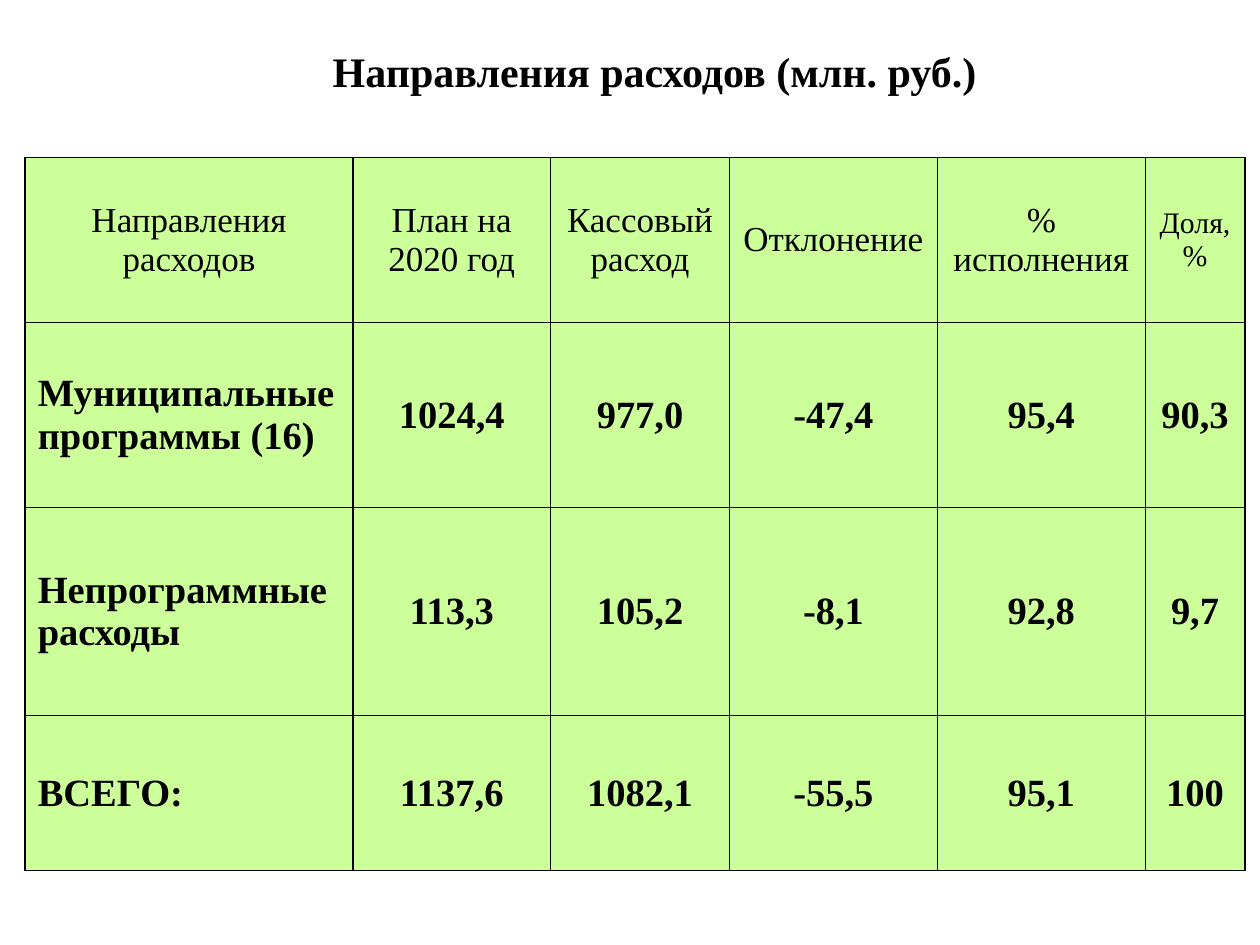
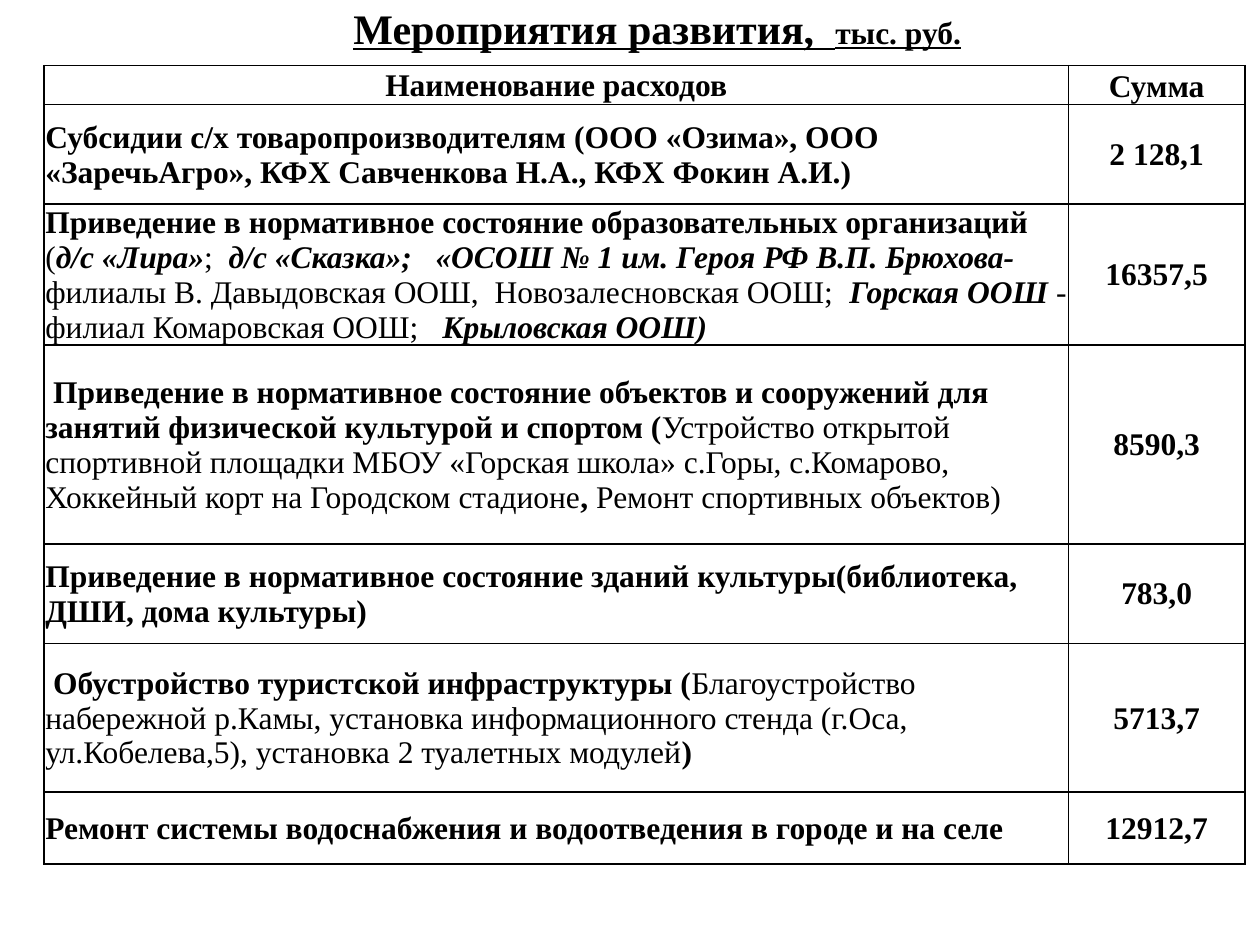
from lxml import etree
from pptx import Presentation
from pptx.dml.color import RGBColor
from pptx.enum.text import MSO_ANCHOR, MSO_AUTO_SIZE, PP_ALIGN
from pptx.oxml.ns import qn
from pptx.util import Inches, Pt

TOP, MIDDLE, BOTTOM = MSO_ANCHOR.TOP, MSO_ANCHOR.MIDDLE, MSO_ANCHOR.BOTTOM
LEFT, CENTER = PP_ALIGN.LEFT, PP_ALIGN.CENTER
NO_AUTOFIT = MSO_AUTO_SIZE.NONE

COLORS = {"text": "000000", "border": "000000", "cell": "CCFF99"}
FONT = "Times New Roman"
GRID_COLUMNS, GRID_ROWS = 100, 75
TITLE_ONLY = 5


class Deck:
    """Holds the shared style and the current page; lengths are grid columns and rows."""

    def __init__(self):
        self.file = Presentation()
        self.file.slide_width, self.file.slide_height = Inches(10), Inches(7.5)
        self.page = None

    def across(self, columns):
        return round(self.file.slide_width * columns / GRID_COLUMNS)

    def down(self, rows):
        return round(self.file.slide_height * rows / GRID_ROWS)

    def area(self, left, top, width, height):
        return self.across(left), self.down(top), self.across(width), self.down(height)

    def add_page(self):
        self.page = self.file.slides.add_slide(self.file.slide_layouts[TITLE_ONLY])

    def add_spans(self, para, spans, size, align):
        """Fill a paragraph with (text, marks[, size]) spans; marks are letters of "biu"."""
        para.alignment = align
        for text, marks, *own_size in spans:
            span = para.add_run()
            span.text = text
            font = span.font
            font.name, font.size = FONT, Pt(own_size[0] if own_size else size)
            font.bold, font.italic, font.underline = (mark in marks for mark in "biu")
            font.color.rgb = RGBColor.from_string(COLORS["text"])

    def add_title(self, area, spans, anchor):
        box = self.page.shapes.title
        box.left, box.top, box.width, box.height = self.area(*area)
        frame = box.text_frame
        frame.word_wrap, frame.auto_size = True, NO_AUTOFIT
        frame.vertical_anchor = anchor
        self.add_spans(frame.paragraphs[0], spans, 24, CENTER)

    def add_border(self, cell):
        properties = cell._tc.get_or_add_tcPr()
        for position, side in enumerate(("lnL", "lnR", "lnT", "lnB")):
            line = etree.Element(qn(f"a:{side}"), w=str(Pt(1)))
            fill = etree.SubElement(line, qn("a:solidFill"))
            etree.SubElement(fill, qn("a:srgbClr"), val=COLORS["border"])
            properties.insert(position, line)

    def add_table(self, corner, widths, heights, cells, size, margins, fill=None):
        """Each cell is a list of paragraphs, each paragraph a list of spans."""
        area = self.area(*corner, sum(widths), sum(heights))
        table = self.page.shapes.add_table(len(heights), len(widths), *area).table
        table.first_row = table.horz_banding = False
        for column, width in zip(table.columns, widths):
            column.width = self.across(width)
        for row, height in zip(table.rows, heights):
            row.height = self.down(height)
        for r, row in enumerate(cells):
            for c, paragraphs in enumerate(row):
                cell = table.cell(r, c)
                cell.vertical_anchor = MIDDLE
                (cell.margin_left, cell.margin_top,
                 cell.margin_right, cell.margin_bottom) = map(Inches, margins)
                if fill:
                    cell.fill.solid()
                    cell.fill.fore_color.rgb = RGBColor.from_string(COLORS[fill])
                else:
                    cell.fill.background()
                self.add_border(cell)
                align = LEFT if r and not c else CENTER
                frame = cell.text_frame
                for number, spans in enumerate(paragraphs):
                    para = frame.add_paragraph() if number else frame.paragraphs[0]
                    self.add_spans(para, spans, size, align)
        return table


def bold(text):
    return [[(text, "b")]]


def add_directions(deck):
    headings = ["Направления расходов", "План на 2020 год", "Кассовый расход",
                "Отклонение", "% исполнения"]
    header = [[[(text, "", 20)]] for text in headings]
    header.append([[("Доля,", "", 17)], [("%", "", 17)]])
    figures = [
        ["Муниципальные программы (16)", "1024,4", "977,0", "-47,4", "95,4", "90,3"],
        ["Непрограммные расходы", "113,3", "105,2", "-8,1", "92,8", "9,7"],
        ["ВСЕГО:", "1137,6", "1082,1", "-55,5", "95,1", "100"],
    ]
    deck.add_page()
    deck.add_title((5.9, 3.1, 92.1, 5), [("Направления расходов (млн. руб.)", "b")], MIDDLE)
    deck.add_table((2, 12.5), [26, 15.7, 14.2, 16.5, 16.5, 7.9], [13.1, 14.7, 16.5, 12.3],
                   [header] + [[bold(text) for text in row] for row in figures],
                   22, (0.1, 0.05, 0.1, 0.05), "cell")


def add_measures(deck):
    schools = [
        [("Приведение в нормативное состояние образовательных организаций", "b")],
        [("(", ""), ("д/с «Лира»", "bi"), (";  ", ""),
         ("д/с «Сказка»;   «ОСОШ № 1 им. Героя РФ В.П. Брюхова- ", "bi"),
         ("филиалы В. Давыдовская ООШ,  Новозалесновская ООШ;  ", ""),
         ("Горская ООШ ", "bi"), ("- филиал Комаровская ООШ;   ", ""),
         ("Крыловская ООШ)", "bi")],
    ]
    sports = [[
        (" Приведение в нормативное состояние объектов и сооружений для занятий "
         "физической культурой и спортом (", "b"),
        ("Устройство открытой спортивной площадки МБОУ «Горская школа» с.Горы, "
         "с.Комарово, Хоккейный корт на Городском стадионе", ""),
        (", ", "b"), ("Ремонт спортивных объектов)", ""),
    ]]
    tourism = [[
        (" Обустройство туристской инфраструктуры (", "b"),
        ("Благоустройство набережной р.Камы, установка информационного стенда "
         "(г.Оса, ул.Кобелева,5), установка 2 туалетных модулей", ""),
        (")", "b"),
    ]]
    measures = [
        (bold("Наименование расходов"), "Сумма"),
        (bold("Субсидии с/х товаропроизводителям (ООО «Озима», ООО «ЗаречьАгро», "
              "КФХ Савченкова Н.А., КФХ Фокин А.И.)"), "2 128,1"),
        (schools, "16357,5"),
        (sports, "8590,3"),
        (bold("Приведение в нормативное состояние зданий культуры(библиотека, ДШИ, "
              "дома культуры)"), "783,0"),
        (tourism, "5713,7"),
        (bold("Ремонт системы водоснабжения и водоотведения в городе и на селе"), "12912,7"),
    ]
    deck.add_page()
    deck.add_title((5.9, -0.3, 91.7, 7.1),
                   [(" ", "bi"), ("Мероприятия развития,  ", "bu"), ("тыс. руб.", "bu", 18)], TOP)
    table = deck.add_table((3.5, 5.2), [81.3, 14], [3.1, 7.9, 11.1, 15.8, 7.9, 11.8, 5.7],
                           [(name, bold(amount)) for name, amount in measures],
                           18, (0.01, 0.01, 0.01, 0))
    table.cell(0, 1).vertical_anchor = BOTTOM


def main():
    deck = Deck()
    add_directions(deck)
    add_measures(deck)
    deck.file.save("out.pptx")


if __name__ == "__main__":
    main()
